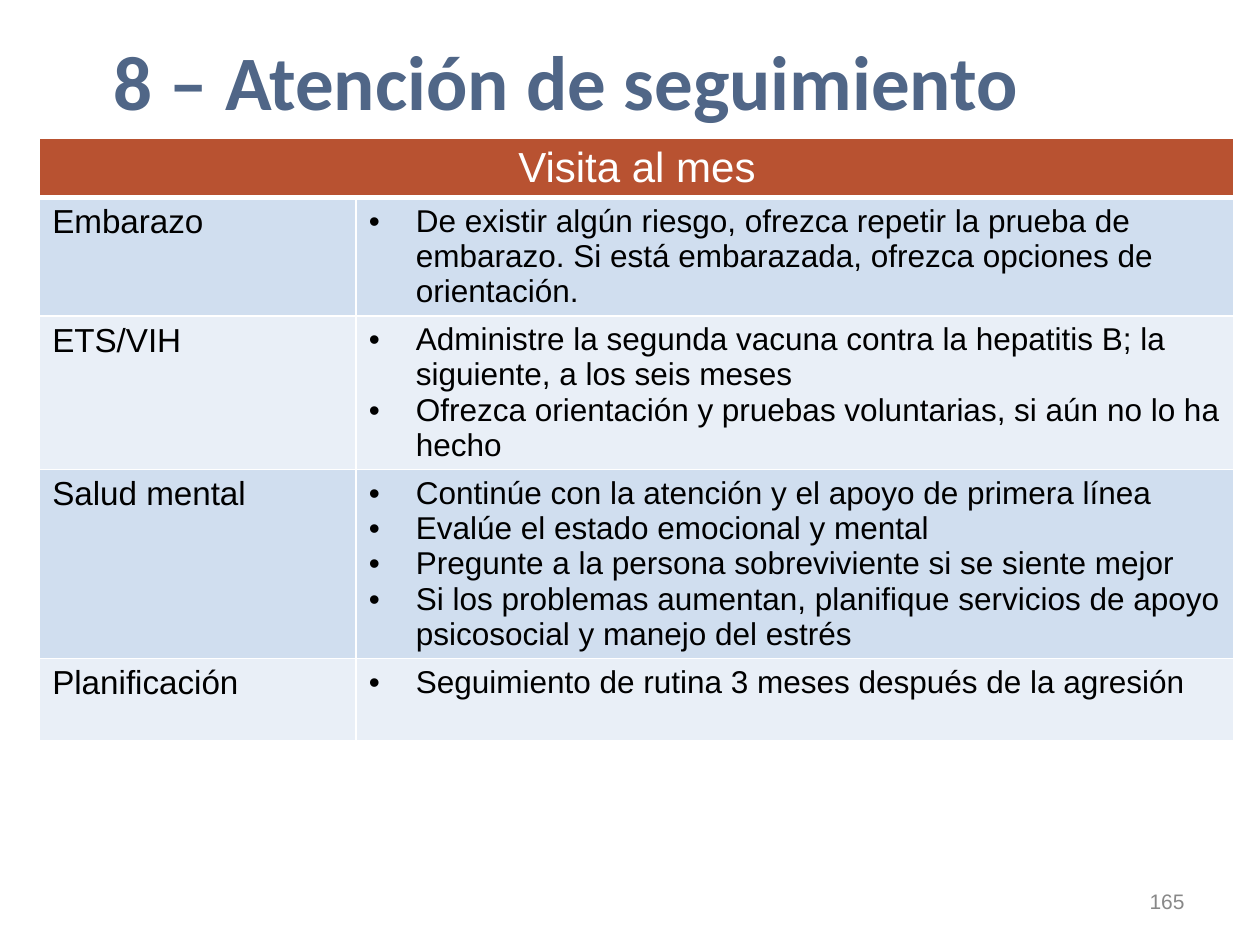
from dataclasses import dataclass

from lxml.etree import SubElement
from pptx import Presentation
from pptx.dml.color import RGBColor
from pptx.enum.text import MSO_ANCHOR, PP_ALIGN
from pptx.oxml.ns import qn
from pptx.util import Cm, Pt

COLORS = {
    "title": "506687",
    "header": "B85231",
    "band_dark": "D0DEEF",
    "band_light": "E9EFF7",
    "white": "FFFFFF",
    "text": "000000",
    "number": "888888",
}


@dataclass
class FollowUp:
    topic: str
    actions: list[str]
    height: float  # cm


FOLLOW_UPS = [
    FollowUp("Embarazo", [
        "De existir algún riesgo, ofrezca repetir la prueba de embarazo. "
        "Si está embarazada, ofrezca opciones de orientación.",
    ], 2.34),
    FollowUp("ETS/VIH", [
        "Administre la segunda vacuna contra la hepatitis B; la siguiente, a los seis meses",
        "Ofrezca orientación y pruebas voluntarias, si aún no lo ha hecho",
    ], 3.05),
    FollowUp("Salud mental", [
        "Continúe con la atención y el apoyo de primera línea",
        "Evalúe el estado emocional y mental",
        "Pregunte a la persona sobreviviente si se siente mejor",
        "Si los problemas aumentan, planifique servicios de apoyo "
        "psicosocial y manejo del estrés",
    ], 3.81),
    FollowUp("Planificación", [
        "Seguimiento de rutina 3 meses después de la agresión",
    ], 1.65),
]


def format_runs(p, size: float, color: str, font: str = "Arial", bold: bool = False) -> None:
    for r in p.runs:
        r.font.name = font
        r.font.size = Pt(size)
        r.font.bold = bold
        r.font.color.rgb = RGBColor.from_string(COLORS[color])


def add_text(slide, left: float, top: float, width: float, height: float, text: str):
    """Add a wrapped, vertically centred text box and return its paragraph."""
    tf = slide.shapes.add_textbox(Cm(left), Cm(top), Cm(width), Cm(height)).text_frame
    tf.word_wrap = True
    tf.vertical_anchor = MSO_ANCHOR.MIDDLE
    tf.text = text
    return tf.paragraphs[0]


def add_bullet(p) -> None:
    pPr = p._p.get_or_add_pPr()
    pPr.set("marL", str(Cm(0.95)))
    pPr.set("indent", str(-Cm(0.95)))
    clr = SubElement(pPr, qn("a:buClr"))
    SubElement(clr, qn("a:srgbClr"), val=COLORS["text"])
    SubElement(pPr, qn("a:buFont"), typeface="Arial")
    SubElement(pPr, qn("a:buChar"), char="•")


def style_cell(cell, fill: str, top: float = 1, bottom: float = 1) -> None:
    """Draw the white borders, then the fill."""
    tcPr = cell._tc.get_or_add_tcPr()
    for side, width in (("L", 1), ("R", 1), ("T", top), ("B", bottom)):
        ln = SubElement(tcPr, qn(f"a:ln{side}"), w=str(Pt(width)))
        solid = SubElement(ln, qn("a:solidFill"))
        SubElement(solid, qn("a:srgbClr"), val=COLORS["white"])
    cell.fill.solid()
    cell.fill.fore_color.rgb = RGBColor.from_string(COLORS[fill])


def fill_row(table, row: int, item: FollowUp) -> None:
    table.rows[row].height = Cm(item.height)
    topic, actions = table.cell(row, 0), table.cell(row, 1)
    for cell in (topic, actions):
        style_cell(cell, "band_dark" if row % 2 else "band_light", top=3 if row == 1 else 1)
    topic.text_frame.text = item.topic
    format_runs(topic.text_frame.paragraphs[0], 19, "text")
    actions.text_frame.text = "\n".join(item.actions)
    for p in actions.text_frame.paragraphs:
        add_bullet(p)
        format_runs(p, 18, "text")


def main() -> None:
    prs = Presentation()
    prs.slide_width, prs.slide_height = Cm(25.4), Cm(19.05)
    slide = prs.slides.add_slide(prs.slide_layouts[6])

    # Follow-up table
    table = slide.shapes.add_table(len(FOLLOW_UPS) + 1, 2, Cm(0.8), Cm(2.78),
                                   Cm(24.08), Cm(11.94)).table
    table.columns[0].width = Cm(6.38)
    table.columns[1].width = Cm(17.7)
    table.rows[0].height = Cm(1.09)

    # Merged header
    header = table.cell(0, 0)
    header.merge(table.cell(0, 1))
    for cell in (header, table.cell(0, 1)):
        style_cell(cell, "header", bottom=3)
    header.text_frame.text = "Visita al mes"
    p = header.text_frame.paragraphs[0]
    p.alignment = PP_ALIGN.CENTER
    format_runs(p, 24, "white")

    for row, item in enumerate(FOLLOW_UPS, start=1):
        fill_row(table, row, item)

    # Slide number
    p = add_text(slide, 18.21, 17.65, 5.92, 1.02, "165")
    p.alignment = PP_ALIGN.RIGHT
    format_runs(p, 12, "number")

    # Title
    p = add_text(slide, 2.03, 0.13, 22.86, 3.18, "8 – Atención de seguimiento")
    p.line_spacing = 0.9
    format_runs(p, 44, "title", font="Calibri", bold=True)

    prs.save("out.pptx")


if __name__ == "__main__":
    main()
